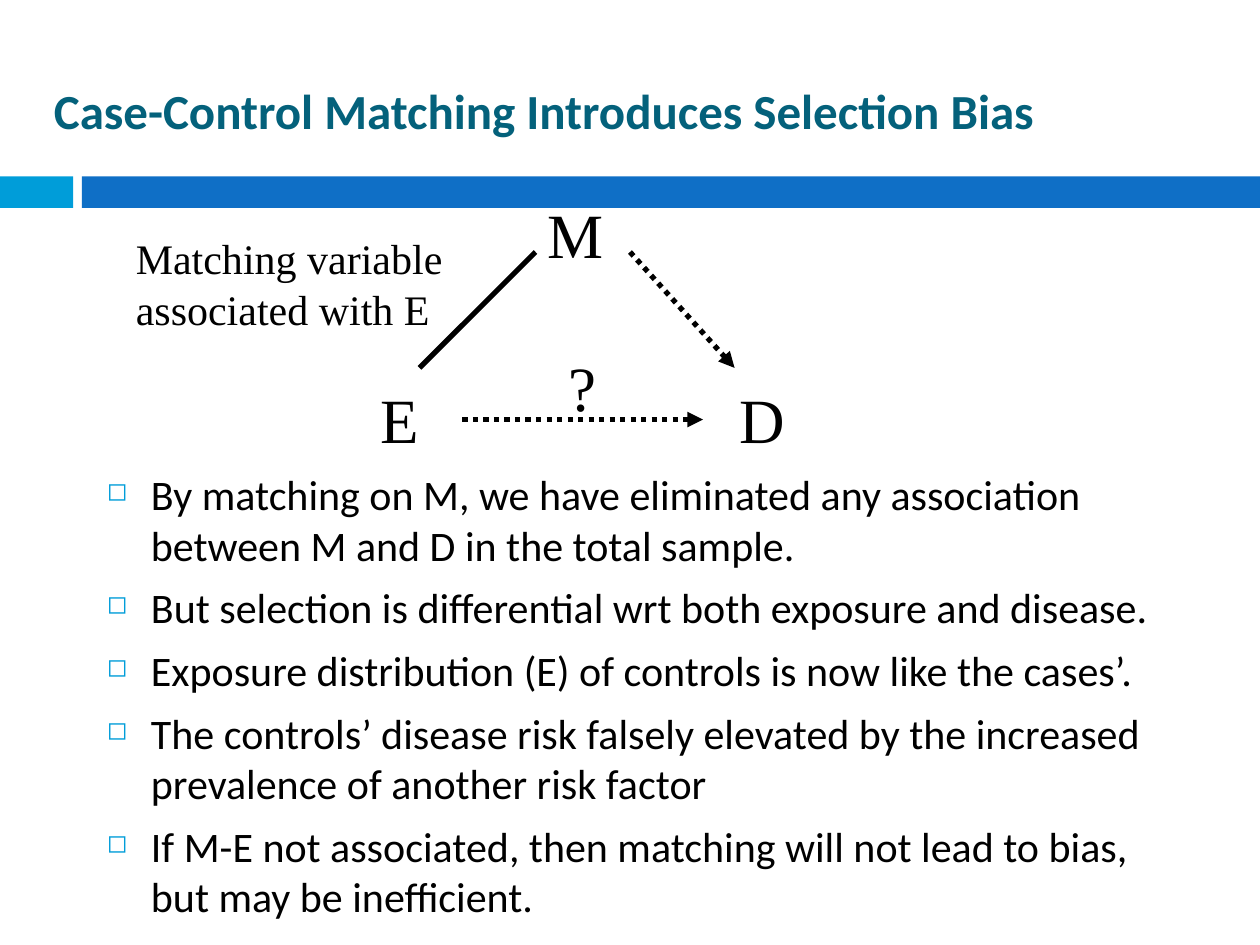
from lxml import etree
from pptx import Presentation
from pptx.dml.color import RGBColor
from pptx.enum.dml import MSO_LINE
from pptx.enum.shapes import MSO_CONNECTOR, MSO_SHAPE
from pptx.enum.text import MSO_ANCHOR, MSO_AUTO_SIZE
from pptx.oxml.ns import qn
from pptx.util import Inches, Pt

RECTANGLE = MSO_SHAPE.RECTANGLE
STRAIGHT = MSO_CONNECTOR.STRAIGHT
DOTTED = MSO_LINE.ROUND_DOT
TOP, MIDDLE = MSO_ANCHOR.TOP, MSO_ANCHOR.MIDDLE
GROW, FIXED = MSO_AUTO_SIZE.SHAPE_TO_FIT_TEXT, MSO_AUTO_SIZE.NONE

COLORS = {"title": "04617B", "accent": "009DD9", "band": "0F6FC6", "ink": "000000"}
TITLE = {"name": "Calibri", "size": Pt(28), "bold": True}
BODY = {"name": "Calibri", "size": Pt(24)}
NODE = {"name": "Times New Roman", "size": Pt(36)}
LABEL = {"name": "Times New Roman", "size": Pt(24)}

BANDS = [(0, 0.58, "accent"), (0.65, 9.35, "band")]
DIAGRAM_TEXT = [
    (["M"], (4.25, 1.5, 0.65, 0.7), NODE),
    (["E"], (2.92, 2.97, 0.51, 0.7), NODE),
    (["D"], (5.77, 2.97, 0.56, 0.7), NODE),
    (["?"], (4.41, 2.72, 0.42, 0.7), NODE),
    (["Matching variable", "associated with E"], (0.98, 1.8, 2.66, 0.9), LABEL),
]
CAUSAL_ARROWS = [((3.67, 3.33), (5.58, 3.33)), ((5, 2), (5.83, 2.92))]
ASSOCIATION = ((3.33, 2.92), (4.25, 2))
POINTS = [
    "By matching on M, we have eliminated any association between M and D in the total sample.",
    "But selection is differential wrt both exposure and disease.",
    "Exposure distribution (E) of controls is now like the cases’.",
    "The controls’ disease risk falsely elevated by the increased prevalence of another risk factor",
    "If M-E not associated, then matching will not lead to bias, but may be inefficient.",
]


def color(name):
    return RGBColor.from_string(COLORS[name])


def add_band(page, left, width, fill):
    band = page.shapes.add_shape(
        RECTANGLE, Inches(left), Inches(1.4), Inches(width), Inches(0.25))
    band.shadow.inherit = False
    band.fill.solid()
    band.fill.fore_color.rgb = color(fill)
    band.line.fill.background()


def add_text(page, lines, place, style, ink="ink", anchor=TOP, wrap=False):
    box = page.shapes.add_textbox(*map(Inches, place))
    frame = box.text_frame
    frame.word_wrap = wrap
    frame.auto_size = FIXED if wrap else GROW
    frame.vertical_anchor = anchor
    frame.text = "\n".join(lines)
    for para in frame.paragraphs:
        for span in para.runs:
            for key, value in style.items():
                setattr(span.font, key, value)
            span.font.color.rgb = color(ink)
    return box


def add_bullet(para):
    para.space_before = Pt(7)
    properties = para._p.get_or_add_pPr()
    properties.set("marL", str(Inches(0.35)))
    properties.set("indent", str(-Inches(0.35)))
    tint = etree.SubElement(properties, qn("a:buClr"))
    etree.SubElement(tint, qn("a:srgbClr"), val=COLORS["accent"])
    etree.SubElement(properties, qn("a:buSzPct"), val="60000")
    etree.SubElement(properties, qn("a:buChar"), char="◻")


def add_line(page, start, end, arrow=False):
    line = page.shapes.add_connector(STRAIGHT, *map(Inches, start + end))
    line.line.width = Pt(3)
    line.line.color.rgb = color("ink")
    if arrow:
        line.line.dash_style = DOTTED
        etree.SubElement(line.line._get_or_add_ln(), qn("a:tailEnd"), type="triangle")
    etree.SubElement(line._element.spPr, qn("a:effectLst"))


def main():
    deck = Presentation()
    deck.slide_width, deck.slide_height = Inches(10), Inches(7.5)
    page = deck.slides.add_slide(deck.slide_layouts[6])
    for left, width, fill in BANDS:
        add_band(page, left, width, fill)
    add_text(page, ["Case-Control Matching Introduces Selection Bias"],
             (0.33, 0.25, 9.33, 1.25), TITLE, "title", MIDDLE, True)
    body = add_text(page, POINTS, (0.75, 3.67, 8.67, 3.08), BODY, wrap=True)
    for para in body.text_frame.paragraphs:
        add_bullet(para)
    for lines, place, style in DIAGRAM_TEXT:
        add_text(page, lines, place, style)
    add_line(page, *ASSOCIATION)
    for start, end in CAUSAL_ARROWS:
        add_line(page, start, end, arrow=True)
    deck.save("out.pptx")


if __name__ == "__main__":
    main()
